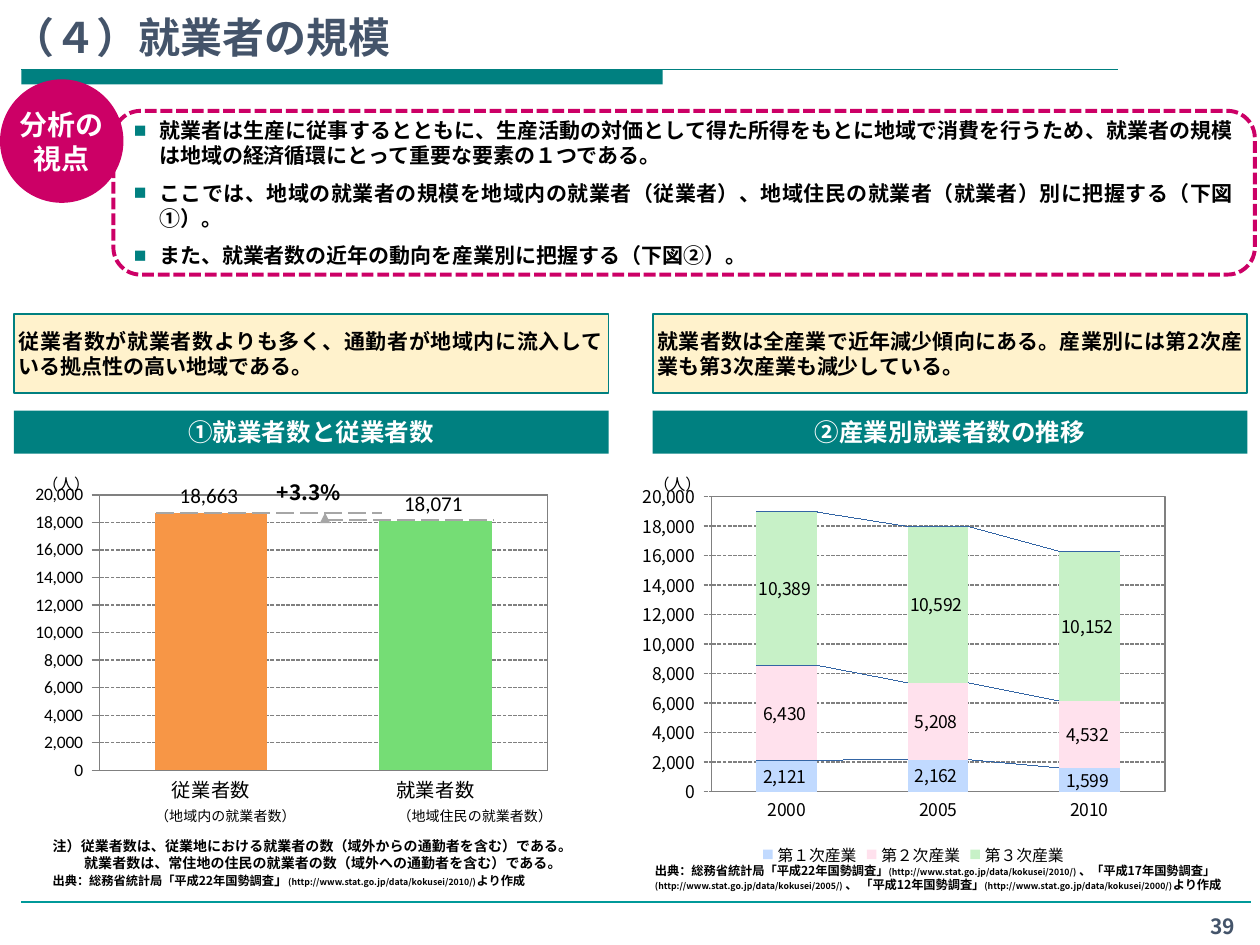
from lxml.etree import SubElement
from pptx import Presentation
from pptx.chart.data import CategoryChartData
from pptx.dml.color import RGBColor
from pptx.enum.chart import XL_CHART_TYPE, XL_LABEL_POSITION, XL_LEGEND_POSITION, XL_TICK_MARK
from pptx.enum.dml import MSO_LINE
from pptx.enum.shapes import MSO_CONNECTOR, MSO_SHAPE
from pptx.enum.text import MSO_ANCHOR, MSO_AUTO_SIZE, PP_ALIGN
from pptx.oxml import parse_xml
from pptx.oxml.ns import nsdecls, qn
from pptx.util import Inches, Pt

HEX = {"teal": "008080", "rule": "009999", "pink": "CC0066", "cream": "FFF2CC",
       "navy": "44546A", "black": "000000", "white": "FFFFFF", "gray": "808080",
       "dash": "A6A6A6", "blue": "3465A4", "orange": "F79646", "green": "75DD75",
       "first": "C1DAFF", "second": "FFE1ED", "third": "C7F1C7"}
CJK, LATIN = "Noto Sans CJK JP", "Calibri"
COMMA = r"#,##0_);\(#,##0\)"
UNIT = "（人）"
TITLE = "（４）就業者の規模"
BADGE = "分析の\v視点"
POINTS = [
    "就業者は生産に従事するとともに、生産活動の対価として得た所得をもとに地域で消費を行うため、就業者の規模は地域の経済循環にとって重要な要素の１つである。",
    "ここでは、地域の就業者の規模を地域内の就業者（従業者）、地域住民の就業者（就業者）別に把握する（下図①）。",
    "また、就業者数の近年の動向を産業別に把握する（下図②）。",
]
PANELS = [
    (0.11, "従業者数が就業者数よりも多く、通勤者が地域内に流入している拠点性の高い地域である。", "①就業者数と従業者数"),
    (5.18, "就業者数は全産業で近年減少傾向にある。産業別には第2次産業も第3次産業も減少している。", "②産業別就業者数の推移"),
]
NOTES = [
    "注）従業者数は、従業地における就業者の数（域外からの通勤者を含む）である。",
    "就業者数は、常住地の住民の就業者の数（域外への通勤者を含む）である。",
    [("出典：総務省統計局「平成22年国勢調査", 7), ("」", 8),
     ("(http://www.stat.go.jp/data/kokusei/2010/)", 5), ("より作成", 7)],
]
SOURCE = [[
    ("出典：総務省統計局「平成22年国勢調査」", 7),
    ("(http://www.stat.go.jp/data/kokusei/2010/) ", 5),
    ("、「平成17年国勢調査」 ", 7),
    ("(http://www.stat.go.jp/data/kokusei/2005/) ", 5),
    ("、 「平成12年国勢調査」", 7),
    ("(http://www.stat.go.jp/data/kokusei/2000/)", 5),
    ("より作成", 7),
]]
LABELS = [
    ((1.1, 6.36, 1.38, 0.24), "（地域内の就業者数）"),
    ((3.05, 6.36, 1.44, 0.24), "（地域住民の就業者数）"),
]
WORKERS = (["従業者数", "就業者数"], [("Series 1", [18663, 18071])])
SECTORS = (["2000", "2005", "2010"], [
    ("第１次産業", [2121, 2162, 1599]),
    ("第２次産業", [6430, 5208, 4532]),
    ("第３次産業", [10389, 10592, 10152]),
])


def rgb(name):
    return RGBColor.from_string(HEX[name])


def style(font, size, color="black", bold=False, face=CJK):
    font.size, font.bold, font.name = Pt(size), bold, face
    SubElement(font._rPr, qn("a:ea")).set("typeface", face)
    font.color.rgb = rgb(color)


def stroke(line, color, width=0.75, dash=None):
    line.color.rgb = rgb(color)
    line.width = Pt(width)
    if dash:
        line.dash_style = dash


def move(shape, spot):
    shape.left, shape.top, shape.width, shape.height = map(Inches, spot)


def write(shape, paras, size, color="black", bold=True, align=PP_ALIGN.LEFT,
          anchor=MSO_ANCHOR.TOP, tight=False, bullet=False):
    frame = shape.text_frame
    frame.word_wrap = True
    frame.auto_size = MSO_AUTO_SIZE.NONE
    frame.vertical_anchor = anchor
    if tight:
        frame.margin_left = frame.margin_right = Inches(0.04)
    for i, item in enumerate(paras):
        para = frame.add_paragraph() if i else frame.paragraphs[0]
        para.alignment = align
        para.space_before = Pt(3 if bullet and i else 0)
        if bullet:
            para.space_after = Pt(4)
            props = para._p.get_or_add_pPr()
            props.set("marL", str(Inches(0.2)))
            props.set("indent", str(-Inches(0.2)))
            tint = SubElement(props, qn("a:buClr"))
            SubElement(tint, qn("a:srgbClr")).set("val", HEX["teal"])
            SubElement(props, qn("a:buChar")).set("char", "■")
        style(para.font, size, color, bold)
        if isinstance(item, str):
            para.text = item
        else:
            for text, points in item:
                run = para.add_run()
                run.text, run.font.size = text, Pt(points)


def block(shapes, kind, spot, fill, edge=None):
    shape = shapes.add_shape(kind, *map(Inches, spot))
    shape.shadow.inherit = False
    shape.fill.solid()
    shape.fill.fore_color.rgb = rgb(fill)
    if edge:
        stroke(shape.line, edge, 1)
    else:
        shape.line.fill.background()
    return shape


def label(shapes, spot, paras, size, **look):
    box = shapes.add_textbox(*map(Inches, spot))
    write(box, paras, size, **look)
    return box


def rule(shapes, ends, color, width=0.75, dash=None, arrow=False):
    line = shapes.add_connector(MSO_CONNECTOR.STRAIGHT, *map(Inches, ends))
    stroke(line.line, color, width, dash)
    if arrow:
        SubElement(line.line._get_or_add_ln(), qn("a:tailEnd")).set("type", "triangle")
    SubElement(line._element.spPr, qn("a:effectLst"))


def locate(node, index, **spot):
    for old in node.findall(qn("c:layout")):
        node.remove(old)
    layout = parse_xml(f"<c:layout {nsdecls('c')}><c:manualLayout/></c:layout>")
    modes = {"xMode": "edge", "yMode": "edge"}
    if "w" in spot:
        modes = {"layoutTarget": "inner", **modes}
    for key, val in {**modes, **spot}.items():
        SubElement(layout[0], qn(f"c:{key}")).set("val", str(val))
    node.insert(index, layout)


def outline(color):
    return (f"<c:spPr {nsdecls('c', 'a')}><a:ln w='9525'><a:solidFill>"
            f"<a:srgbClr val='{HEX[color]}'/></a:solidFill></a:ln></c:spPr>")


def graph(shapes, kind, spot, table, gap, colors, sizes, faces, dash):
    data = CategoryChartData(number_format=COMMA)
    data.categories = table[0]
    for name, vals in table[1]:
        data.add_series(name, vals)
    chart = shapes.add_chart(kind, *map(Inches, spot), data).chart
    style(chart.font, 10, face=LATIN)
    chart.has_title = chart.has_legend = False
    cat, val, plot = chart.category_axis, chart.value_axis, chart.plots[0]
    cat.major_tick_mark, val.major_tick_mark = XL_TICK_MARK.NONE, XL_TICK_MARK.OUTSIDE
    for axis, size, face, edge in zip((cat, val), sizes, faces, (None, dash)):
        style(axis.tick_labels.font, size, face=face)
        stroke(axis.format.line, "gray", dash=edge)
    val.minimum_scale, val.maximum_scale, val.major_unit = 0, 20000, 2000
    val.tick_labels.number_format = COMMA
    val.tick_labels.number_format_is_linked = False
    stroke(val.major_gridlines.format.line, "gray", dash=MSO_LINE.SQUARE_DOT)
    head = val.axis_title.text_frame
    head.text = UNIT
    style(head.paragraphs[0].font, 9)
    head._txBody.bodyPr.set("rot", "0")
    head._txBody.bodyPr.set("vert", "horz")
    locate(val.axis_title._element, 1, x=0.02, y=0.03)
    area = chart._chartSpace.chart.plotArea
    locate(area, 0, x=0.13, y=0.1, w=0.83, h=0.71)
    area.append(parse_xml(outline("gray")))
    plot.gap_width, plot.vary_by_categories = gap, False
    for series, tints in zip(plot.series, colors):
        fills = [series] if len(tints) == 1 else [series.points[i] for i in range(len(tints))]
        for part, tint in zip(fills, tints):
            part.format.fill.solid()
            part.format.fill.fore_color.rgb = rgb(tint)
        marks = series.data_labels
        marks.show_value = True
        marks.number_format, marks.number_format_is_linked = COMMA, False
        style(marks.font, sizes[2], face=faces[2])
    return chart


def main():
    """Build the slide on the number of workers."""
    deck = Presentation()
    deck.slide_width, deck.slide_height = Inches(10), Inches(7.5)
    slide = deck.slides.add_slide(deck.slide_layouts[1])
    shapes = slide.shapes
    middle, center, both = MSO_ANCHOR.MIDDLE, PP_ALIGN.CENTER, PP_ALIGN.JUSTIFY

    move(shapes.title, (0, 0, 8.69, 0.54))
    write(shapes.title, [TITLE], 24, "navy", anchor=MSO_ANCHOR.BOTTOM)
    body = slide.placeholders[1]
    move(body, (0.9, 0.88, 9.06, 1.3))
    body._element.spPr.insert(1, parse_xml(
        f"<a:prstGeom {nsdecls('a')} prst='roundRect'><a:avLst/></a:prstGeom>"))
    stroke(body.line, "pink", 2.25, MSO_LINE.SQUARE_DOT)
    write(body, POINTS, 12, align=both, anchor=middle, bullet=True)

    block(shapes, MSO_SHAPE.RECTANGLE, (0.17, 0.55, 5.09, 0.12), "teal")
    rule(shapes, (0.17, 0.55, 8.87, 0.55), "teal")
    rule(shapes, (0.17, 7.16, 9.93, 7.16), "rule")
    badge = block(shapes, MSO_SHAPE.OVAL, (0, 0.63, 0.98, 0.98), "pink")
    write(badge, [BADGE], 16, "white", align=center, anchor=middle, tight=True)
    badge.text_frame.word_wrap = False

    sectors = graph(shapes, XL_CHART_TYPE.COLUMN_STACKED, (5.08, 3.61, 4.34, 3.3), SECTORS,
                    150, [["first"], ["second"], ["third"]], (10, 10, 10), (CJK, CJK, CJK),
                    MSO_LINE.SQUARE_DOT)
    plot = sectors.plots[0]
    plot.overlap = 100
    plot._element.find(qn("c:overlap")).addnext(parse_xml(
        f"<c:serLines {nsdecls('c')}>{outline('blue')}</c:serLines>"))
    sectors.has_legend = True
    sectors.legend.position = XL_LEGEND_POSITION.BOTTOM
    sectors.legend.include_in_layout = False
    style(sectors.legend.font, 9)
    workers = graph(shapes, XL_CHART_TYPE.COLUMN_CLUSTERED, (0.23, 3.62, 4.29, 3.08), WORKERS,
                    100, [["orange", "green"]], (11, 10, 12), (CJK, LATIN, LATIN), None)
    workers.plots[0].series[0].data_labels.position = XL_LABEL_POSITION.OUTSIDE_END

    for left, claim, head in PANELS:
        box = block(shapes, MSO_SHAPE.RECTANGLE, (left, 2.49, 4.72, 0.63), "cream", "teal")
        write(box, [claim], 12, align=both, anchor=middle, tight=True)
        bar = block(shapes, MSO_SHAPE.RECTANGLE, (left, 3.26, 4.72, 0.34), "teal")
        write(bar, [head], 14, "white", align=center)
    for spot, text in LABELS:
        label(shapes, spot, [text], 8, bold=False, align=center)
    notes = label(shapes, (0.32, 6.6, 4.53, 0.5), NOTES, 8)
    notes.text_frame.paragraphs[1]._p.pPr.set("marL", str(Inches(0.25)))
    label(shapes, (5.1, 6.8, 4.97, 0.34), SOURCE, 7)

    for ends in ((1.24, 4.07, 3.03, 4.07), (2.58, 4.13, 3.92, 4.13)):
        rule(shapes, ends, "dash", 1.25, MSO_LINE.LONG_DASH)
    rule(shapes, (2.58, 4.13, 2.58, 4.07), "dash", 1, arrow=True)
    label(shapes, (2.1, 3.76, 0.97, 0.3), ["+3.3%"], 12)
    label(shapes, (9.41, 7.2, 0.59, 0.28), ["39"], 12, color="navy", align=center)
    deck.save("out.pptx")


if __name__ == "__main__":
    main()
